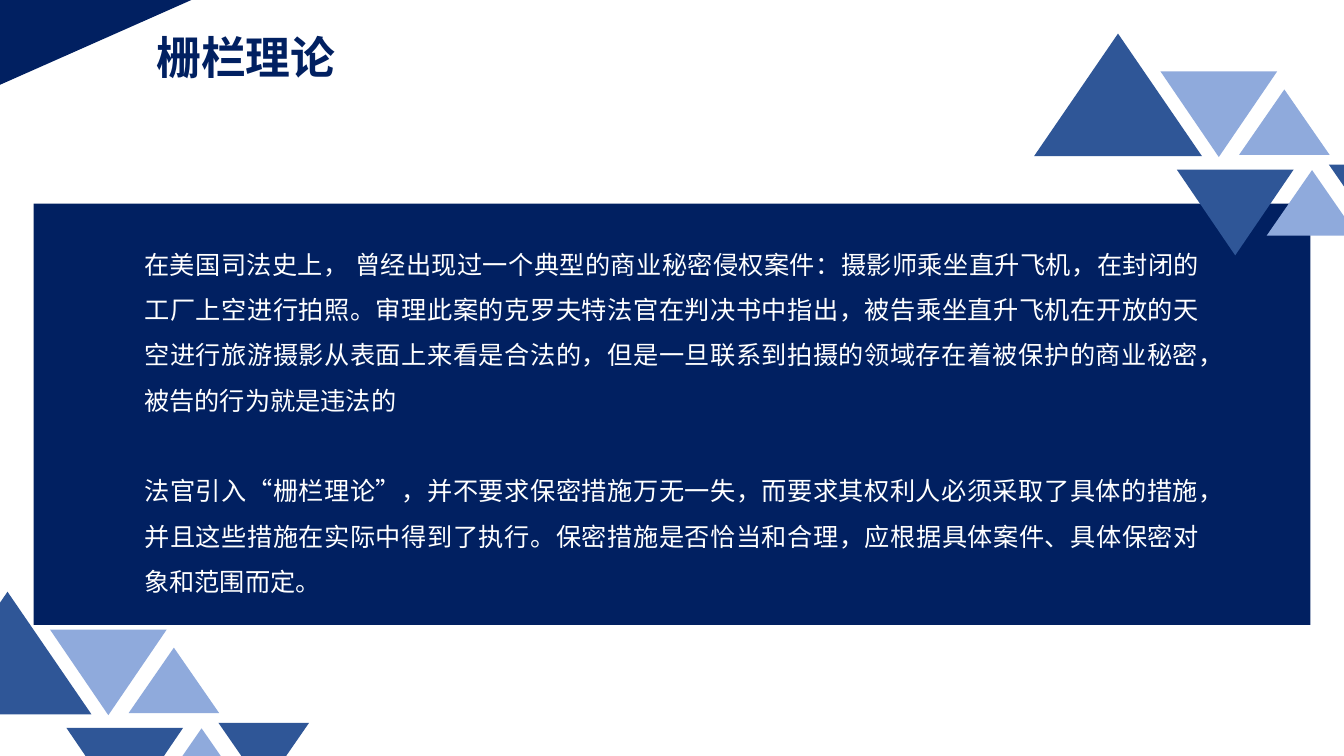
from dataclasses import dataclass

from lxml import etree
from pptx import Presentation
from pptx.dml.color import RGBColor
from pptx.enum.shapes import MSO_SHAPE
from pptx.enum.text import MSO_ANCHOR, MSO_AUTO_SIZE, PP_ALIGN
from pptx.oxml.ns import qn
from pptx.util import Emu, Inches, Pt

RECTANGLE = MSO_SHAPE.RECTANGLE
RIGHT_TRIANGLE = MSO_SHAPE.RIGHT_TRIANGLE
TRIANGLE = MSO_SHAPE.ISOSCELES_TRIANGLE
TOP = MSO_ANCHOR.TOP
GROW = MSO_AUTO_SIZE.SHAPE_TO_FIT_TEXT
LEFT, JUSTIFY = PP_ALIGN.LEFT, PP_ALIGN.JUSTIFY
TITLE_ONLY = 5

SLIDE_W, SLIDE_H = Inches(13.33), Inches(7.5)
COLUMNS, ROWS = 160, 90


@dataclass(frozen=True)
class Theme:
    navy: RGBColor = RGBColor(0x01, 0x20, 0x61)
    blue: RGBColor = RGBColor(0x2F, 0x56, 0x97)
    sky: RGBColor = RGBColor(0x8F, 0xAA, 0xDC)
    white: RGBColor = RGBColor(0xFF, 0xFF, 0xFF)
    font: str = "Noto Sans CJK SC"
    title_size: Pt = Pt(32)
    body_size: Pt = Pt(18)
    line_spacing: float = 1.5
    paragraph_gap: Pt = Pt(32.3)


@dataclass(frozen=True)
class Box:
    """Place on the slide in grid columns and rows."""
    col: float
    row: float
    cols: float
    rows: float

    def emu(self) -> tuple[Emu, Emu, Emu, Emu]:
        return (Emu(int(self.col * SLIDE_W / COLUMNS)), Emu(int(self.row * SLIDE_H / ROWS)),
                Emu(int(self.cols * SLIDE_W / COLUMNS)), Emu(int(self.rows * SLIDE_H / ROWS)))


@dataclass(frozen=True)
class Triangle:
    """Triangle placed relative to the corner of its cluster."""
    col: float
    row: float
    size: tuple[float, float]
    color: RGBColor
    points_down: bool = False


THEME = Theme()
PANEL = Box(4, 24.25, 152, 50.15)
CORNER = Box(0, 0, 22.8, 10.1)
TITLE = Box(17.4, 2.9, 24, 7.7)
BODY = Box(16, 27.25, 128, 44.2)

LARGE, MEDIUM, SMALL = (20, 14.6), (13.9, 10.2), (10.8, 7.8)
CLUSTER = (
    Triangle(0, 0, LARGE, THEME.blue),
    Triangle(15.05, 4.5, MEDIUM, THEME.sky, True),
    Triangle(17, 16.2, MEDIUM, THEME.blue, True),
    Triangle(24.4, 6.65, SMALL, THEME.sky),
    Triangle(27.7, 16.25, SMALL, THEME.sky),
    Triangle(35.1, 15.6, SMALL, THEME.blue, True),
)
CLUSTER_CORNERS = ((-9.1, 70.45), (123.1, 4))

TITLE_TEXT = "栅栏理论"
BODY_TEXTS = (
    "在美国司法史上， 曾经出现过一个典型的商业秘密侵权案件：摄影师乘坐直升飞机，在封闭的"
    "工厂上空进行拍照。审理此案的克罗夫特法官在判决书中指出，被告乘坐直升飞机在开放的天"
    "空进行旅游摄影从表面上来看是合法的，但是一旦联系到拍摄的领域存在着被保护的商业秘密，"
    "被告的行为就是违法的",
    "法官引入“栅栏理论”，并不要求保密措施万无一失，而要求其权利人必须采取了具体的措施，"
    "并且这些措施在实际中得到了执行。保密措施是否恰当和合理，应根据具体案件、具体保密对"
    "象和范围而定。",
)


def add_filled(shapes, kind: MSO_SHAPE, box: Box, color: RGBColor, flipped: bool = False) -> None:
    sp = shapes.add_shape(kind, *box.emu())
    sp.shadow.inherit = False
    sp.fill.solid()
    sp.fill.fore_color.rgb = color
    sp.line.fill.background()
    if flipped:
        sp.element.spPr.get_or_add_xfrm().set("flipV", "1")


def add_cluster(shapes, corner: tuple[float, float]) -> None:
    col, row = corner
    for t in CLUSTER:
        add_filled(shapes, TRIANGLE, Box(col + t.col, row + t.row, *t.size), t.color, t.points_down)


def format_paragraph(p, size: Pt, color: RGBColor, align: PP_ALIGN, bold: bool = False) -> None:
    p.alignment = align
    for r in p.runs:
        r.font.name = THEME.font
        r.font.size = size
        r.font.bold = bold
        r.font.color.rgb = color
        east_asian = etree.Element(qn("a:ea"), typeface=THEME.font)
        r.font._element.find(qn("a:latin")).addnext(east_asian)


def set_title(sp) -> None:
    sp.left, sp.top, sp.width, sp.height = TITLE.emu()
    tf = sp.text_frame
    tf.text = TITLE_TEXT
    tf.word_wrap = False
    tf.auto_size = GROW
    tf.vertical_anchor = TOP
    format_paragraph(tf.paragraphs[0], THEME.title_size, THEME.navy, LEFT, bold=True)


def add_body(shapes) -> None:
    tf = shapes.add_textbox(*BODY.emu()).text_frame
    tf.text = "\n".join(BODY_TEXTS)
    tf.word_wrap = True
    tf.auto_size = GROW
    for i, p in enumerate(tf.paragraphs):
        format_paragraph(p, THEME.body_size, THEME.white, JUSTIFY)
        p.line_spacing = THEME.line_spacing
        if i:
            p.space_before = THEME.paragraph_gap


def main() -> None:
    prs = Presentation()
    prs.slide_width, prs.slide_height = SLIDE_W, SLIDE_H
    shapes = prs.slides.add_slide(prs.slide_layouts[TITLE_ONLY]).shapes
    set_title(shapes.title)
    add_filled(shapes, RECTANGLE, PANEL, THEME.navy)
    add_filled(shapes, RIGHT_TRIANGLE, CORNER, THEME.navy, flipped=True)
    add_body(shapes)
    for corner in CLUSTER_CORNERS:
        add_cluster(shapes, corner)
    prs.save("out.pptx")


if __name__ == "__main__":
    main()
